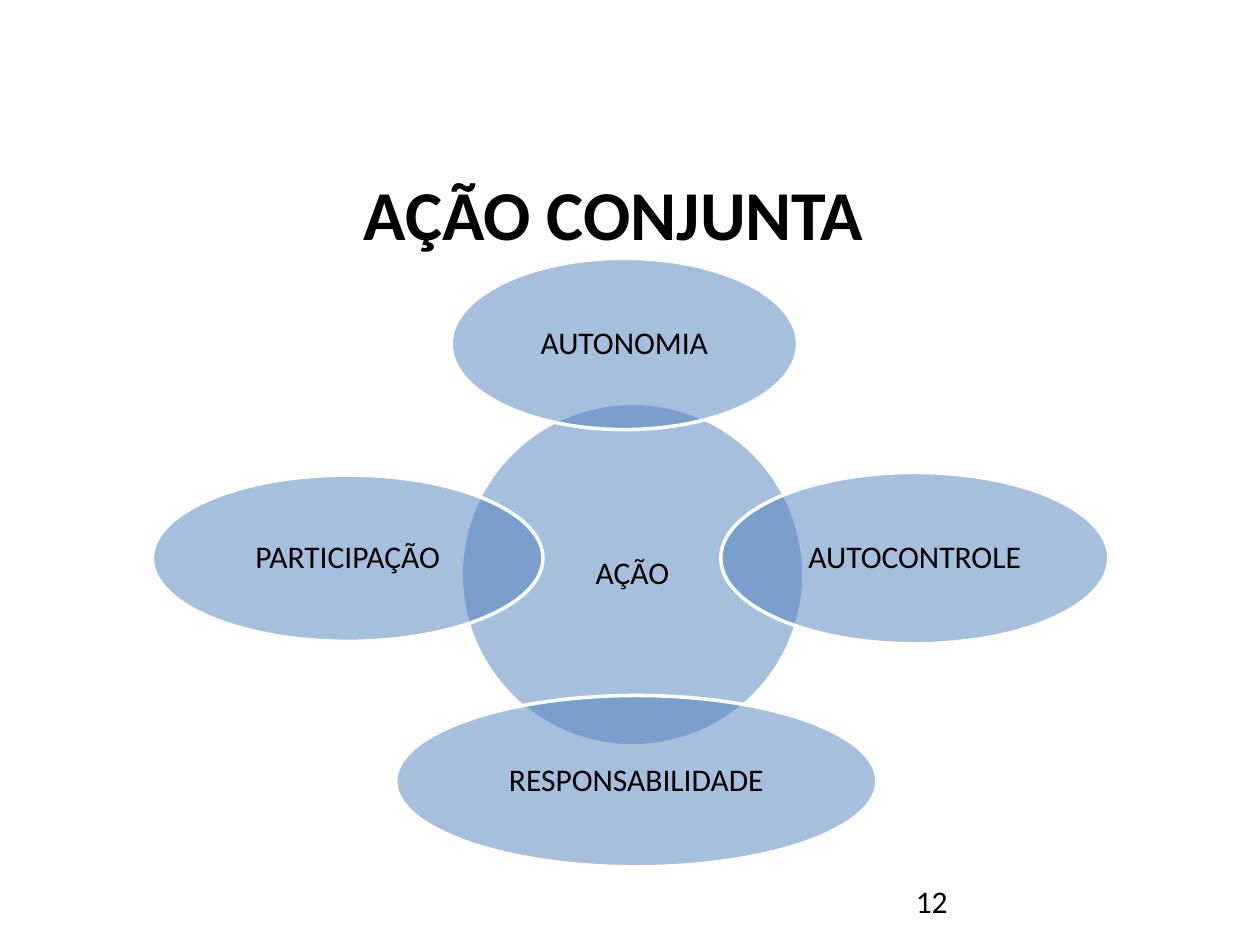
from dataclasses import dataclass
from lxml.etree import SubElement
from pptx import Presentation
from pptx.dml.color import RGBColor
from pptx.enum.shapes import MSO_SHAPE as Shape
from pptx.enum.text import MSO_ANCHOR as Anchor, MSO_AUTO_SIZE as AutoSize, PP_ALIGN as Align
from pptx.oxml.ns import qn
from pptx.util import Inches, Pt


@dataclass(frozen=True)
class Theme:
    font: str = "Calibri"
    text: str = "000000"
    fill: str = "4F81BD"
    line: str = "FFFFFF"
    opacity: int = 50
    title_size: int = 40
    body_size: int = 18
    line_width: int = 2


class SlideBuilder:
    """Draws themed elements placed on a grid of 100 columns by 75 rows."""

    cols, rows = 100, 75

    def __init__(self, prs, theme):
        self.prs, self.theme = prs, theme
        self.s = prs.slides.add_slide(prs.slide_layouts[5])

    def box(self, col, row, width, height):
        dx, dy = self.prs.slide_width / self.cols, self.prs.slide_height / self.rows
        return [round(v) for v in (col * dx, row * dy, width * dx, height * dy)]

    def add_text(self, tf, text, size, align, anchor, bold=False):
        tf.word_wrap = True
        tf.auto_size = AutoSize.NONE
        tf.vertical_anchor = anchor
        p = tf.paragraphs[0]
        p.alignment = align
        r = p.add_run()
        r.text = text
        r.font.name, r.font.size, r.font.bold = self.theme.font, Pt(size), bold
        r.font.color.rgb = RGBColor.from_string(self.theme.text)
        return p

    def title(self, text, *cell):
        sp = self.s.shapes.title
        sp.left, sp.top, sp.width, sp.height = self.box(*cell)
        sp.text_frame.margin_right = Inches(0.35)
        self.add_text(sp.text_frame, text, self.theme.title_size, Align.CENTER, Anchor.TOP, True)

    def ellipse(self, text, *cell):
        sp = self.s.shapes.add_shape(Shape.OVAL, *self.box(*cell))
        sp.shadow.inherit = False
        sp.fill.solid()
        sp.fill.fore_color.rgb = RGBColor.from_string(self.theme.fill)
        color = sp.element.spPr.find(f"{qn('a:solidFill')}/{qn('a:srgbClr')}")
        SubElement(color, qn("a:alpha"), val=str(self.theme.opacity * 1000))
        sp.line.color.rgb = RGBColor.from_string(self.theme.line)
        sp.line.width = Pt(self.theme.line_width)
        tf = sp.text_frame
        tf.margin_left = tf.margin_right = tf.margin_top = tf.margin_bottom = Inches(0.03)
        p = self.add_text(tf, text, self.theme.body_size, Align.CENTER, Anchor.MIDDLE)
        p.line_spacing = 0.9

    def label(self, text, *cell):
        sp = self.s.shapes.add_textbox(*self.box(*cell))
        self.add_text(sp.text_frame, text, self.theme.body_size, Align.LEFT, Anchor.TOP)


def main():
    prs = Presentation()
    prs.slide_width, prs.slide_height = Inches(10), Inches(7.5)
    slide = SlideBuilder(prs, Theme())
    slide.title("AÇÃO CONJUNTA", 4.3, 13, 91.3, 55.1)
    ellipses = [
        ("AÇÃO", 36.6, 32, 27.2, 27.2),
        ("AUTONOMIA", 35.8, 20.5, 27.5, 13.6),
        ("AUTOCONTROLE", 57.2, 37.5, 30.8, 13.6),
        ("RESPONSABILIDADE", 31.4, 55.2, 38.2, 13.6),
        ("PARTICIPAÇÃO", 12.1, 37.7, 31, 13.2),
    ]
    for text, *cell in ellipses:
        slide.ellipse(text, *cell)
    slide.label("12", 71.7, 69.5, 23.3, 4)
    prs.save("out.pptx")


if __name__ == "__main__":
    main()
